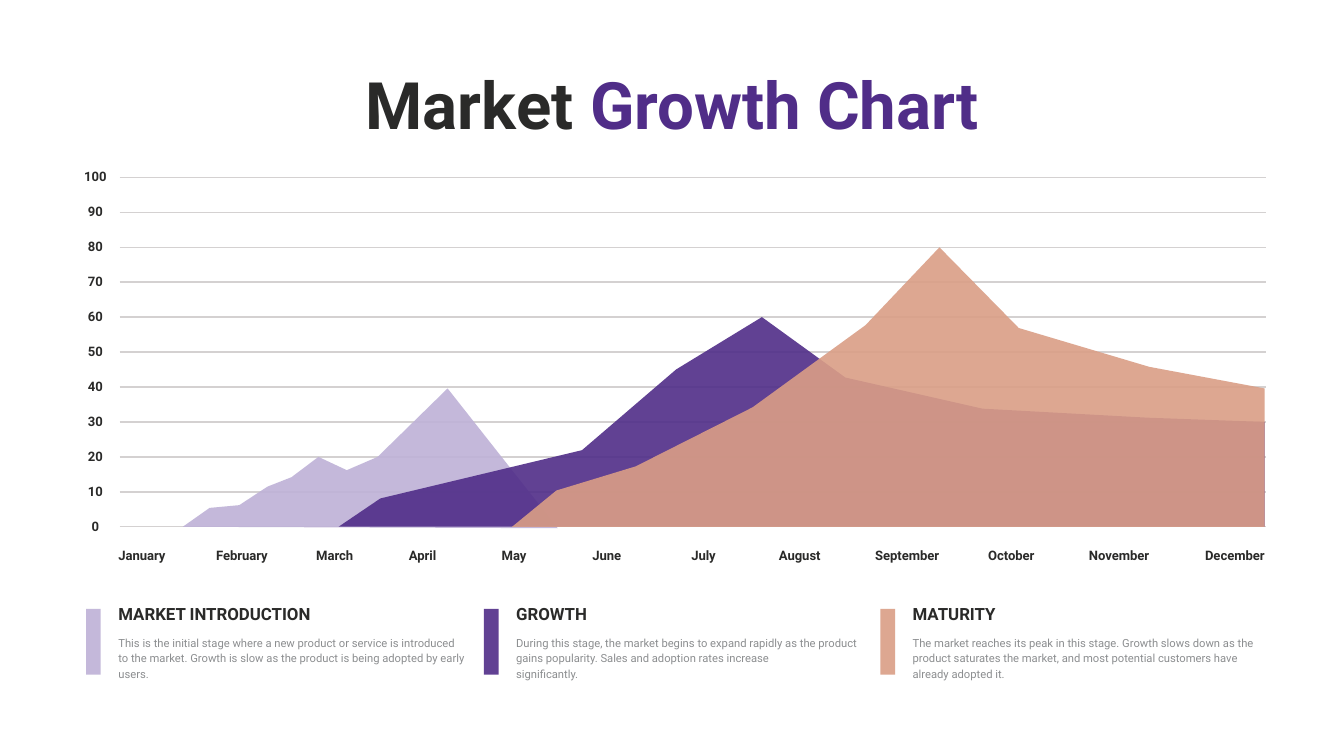
from dataclasses import dataclass
from lxml.etree import SubElement
from pptx import Presentation
from pptx.dml.color import RGBColor
from pptx.enum.shapes import MSO_CONNECTOR, MSO_SHAPE
from pptx.enum.text import MSO_ANCHOR, MSO_AUTO_SIZE, PP_ALIGN
from pptx.oxml.ns import qn
from pptx.util import Pt


@dataclass(frozen=True)
class Theme:
    font: str = "Roboto"
    ink: str = "2A2A29"
    grey: str = "8C8E90"
    grid: str = "D4D1D1"
    lilac: str = "BEB1D7"
    purple: str = "502D88"
    peach: str = "DA9E86"
    title: float = 35
    head: float = 9
    label: float = 7
    note: float = 6
    tight: float = 0.9
    loose: float = 1.15
    alpha: int = 90


class Painter:
    def __init__(self, slide, theme):
        self.slide = slide
        self.theme = theme

    def fill_text(self, frame, lines, size, bold, align, space):
        frame.margin_left = frame.margin_right = 0
        frame.margin_top = frame.margin_bottom = 0
        frame.word_wrap = True
        frame.vertical_anchor = MSO_ANCHOR.TOP
        frame.auto_size = MSO_AUTO_SIZE.SHAPE_TO_FIT_TEXT
        for index, runs in enumerate(lines):
            para = frame.add_paragraph() if index else frame.paragraphs[0]
            para.alignment = align
            para.line_spacing = space
            for words, color in runs:
                run = para.add_run()
                run.text = words
                run.font.name = self.theme.font
                run.font.size = Pt(size)
                run.font.bold = bold
                run.font.color.rgb = RGBColor.from_string(color)

    def title(self, box, runs):
        shape = self.slide.shapes.title
        shape.left, shape.top, shape.width, shape.height = map(Pt, box)
        self.fill_text(shape.text_frame, [runs], self.theme.title, True,
                       PP_ALIGN.CENTER, self.theme.tight)

    def label(self, box, words, size, align=PP_ALIGN.LEFT):
        shape = self.slide.shapes.add_textbox(*map(Pt, box))
        self.fill_text(shape.text_frame, [[(words, self.theme.ink)]], size,
                       True, align, self.theme.tight)

    def note(self, box, lines):
        shape = self.slide.shapes.add_textbox(*map(Pt, box))
        runs = [[(line, self.theme.grey)] for line in lines]
        self.fill_text(shape.text_frame, runs, self.theme.note, False,
                       PP_ALIGN.LEFT, self.theme.loose)

    def rule(self, left, right, y):
        line = self.slide.shapes.add_connector(
            MSO_CONNECTOR.STRAIGHT, Pt(left), Pt(y), Pt(right), Pt(y))
        line.line.color.rgb = RGBColor.from_string(self.theme.grid)
        line.line.width = Pt(0.75)
        SubElement(line._element.spPr, qn("a:effectLst"))

    def tint(self, shape, color):
        shape.shadow.inherit = False
        shape.line.fill.background()
        shape.fill.solid()
        shape.fill.fore_color.rgb = RGBColor.from_string(color)
        tone = shape._element.spPr.find(qn("a:solidFill")).find(qn("a:srgbClr"))
        SubElement(tone, qn("a:alpha")).set("val", str(self.theme.alpha * 1000))

    def bar(self, box, color):
        shape = self.slide.shapes.add_shape(MSO_SHAPE.RECTANGLE, *map(Pt, box))
        self.tint(shape, color)

    def area(self, points, color):
        spots = [(Pt(x), Pt(y)) for x, y in points]
        maker = self.slide.shapes.build_freeform(*spots[0])
        maker.add_line_segments(spots[1:], close=True)
        self.tint(maker.convert_to_shape(), color)


BASE, UNIT = 282.24, 1.872
MONTHS = [
    ("January", 63.4, 30.2), ("February", 111.6, 36), ("March", 164.2, 30.2),
    ("April", 216.7, 19.4), ("May", 263.5, 23.8), ("June", 311.8, 26.6),
    ("July", 365, 23.8), ("August", 412.6, 31.7), ("September", 463.7, 44.6),
    ("October", 524.9, 33.8), ("November", 578.2, 42.5),
    ("December", 638.6, 38.9),
]


def level(value):
    return BASE - UNIT * value


def main():
    deck = Presentation()
    deck.slide_width, deck.slide_height = Pt(720), Pt(405)
    theme = Theme()
    pen = Painter(deck.slides.add_slide(deck.slide_layouts[5]), theme)
    stages = [
        ("MARKET INTRODUCTION", theme.lilac, 46.1,
         ["This is the initial stage where a new product or service is introduced",
          "to the market. Growth is slow as the product is being adopted by early users."],
         [(97.9, 0), (298.8, -0.4), (239.8, 39.6), (202.3, 20), (185.8, 16.2),
          (170.6, 20), (156.2, 14.2), (143.3, 11.5), (128.2, 6.2), (112.3, 5.4)]),
        ("GROWTH", theme.purple, 259.2,
         ["During this stage, the market begins to expand rapidly as the product "
          "gains popularity. Sales and adoption rates increase",
          "significantly."],
         [(181.4, 0), (677.5, 0), (677.5, 30), (614.9, 31.2), (526.3, 33.8),
          (452.9, 42.7), (408.2, 60), (362.2, 45), (311.8, 21.9), (203.8, 8.1)]),
        ("MATURITY", theme.peach, 471.6,
         ["The market reaches its peak in this stage. Growth slows down as the "
          "product saturates the market, and most potential customers have "
          "already adopted it."],
         [(274.3, 0), (677.5, 0), (677.5, 39.6), (615.6, 45.8), (545.8, 56.9),
          (503.3, 80), (463.7, 57.7), (403.2, 34.2), (340.6, 17.3), (298.1, 10.4)]),
    ]

    pen.title((51.1, 38.9, 618.5, 38.2),
              [("Market ", theme.ink), ("Growth Chart", theme.purple)])

    ends = {"January": PP_ALIGN.LEFT, "December": PP_ALIGN.RIGHT}
    for month, left, width in MONTHS:
        pen.label((left, 294.5, width, 7.9), month, theme.label,
                  ends.get(month, PP_ALIGN.CENTER))

    for value in range(100, -1, -10):
        y = level(value)
        pen.label((42.5, y - 3.7, 17.3, 7.9), str(value), theme.label,
                  PP_ALIGN.CENTER)
        pen.rule(64.1, 678.2, y)

    for name, color, left, lines, points in stages:
        pen.area([(x, level(value)) for x, value in points], color)

    for name, color, left, lines, points in stages:
        pen.label((left + 17.3, 324.7, 113.8, 10.1), name, theme.head)
        pen.note((left + 17.3, 339.8, 188.6, 23.8), lines)
        pen.bar((left, 326.2, 7.9, 35.3), color)

    deck.save("out.pptx")


if __name__ == "__main__":
    main()
